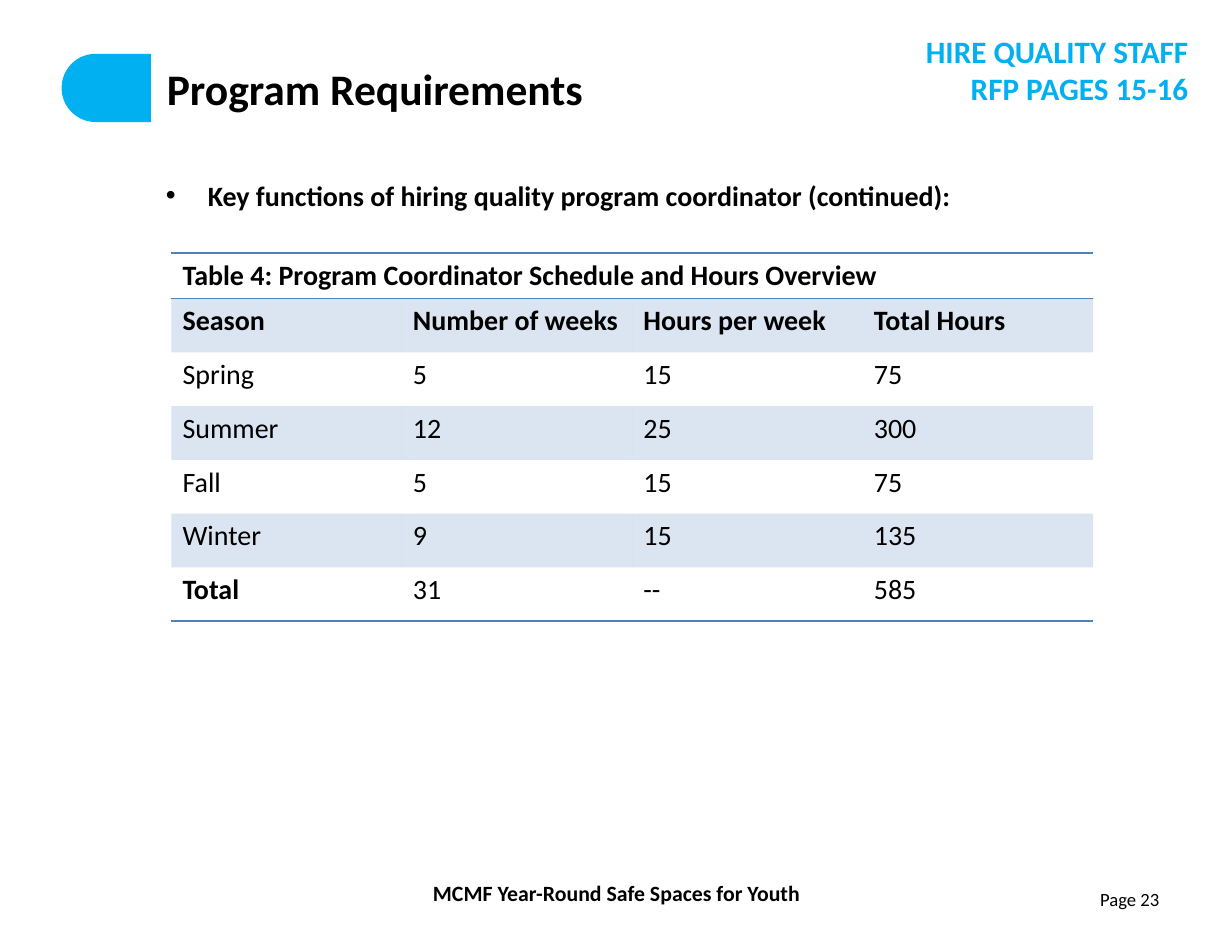
from dataclasses import dataclass
from typing import Optional

from lxml import etree
from pptx import Presentation
from pptx.dml.color import RGBColor
from pptx.enum.shapes import MSO_SHAPE
from pptx.enum.text import MSO_ANCHOR, PP_ALIGN
from pptx.oxml.ns import qn
from pptx.util import Inches, Pt

ROUNDED, RECTANGLE = MSO_SHAPE.ROUNDED_RECTANGLE, MSO_SHAPE.RECTANGLE
LEFT, CENTER, RIGHT = PP_ALIGN.LEFT, PP_ALIGN.CENTER, PP_ALIGN.RIGHT
TOP, MIDDLE = MSO_ANCHOR.TOP, MSO_ANCHOR.MIDDLE

FONT = "Calibri"
COLORS = {"black": "000000", "white": "FFFFFF", "accent": "00B0F0", "table": "4F81BD"}
NO_STYLE = "{2D5ABB26-0587-4C30-8999-92F81FD0307C}"
TABLE_TITLE = "Table 4: Program Coordinator Schedule and Hours Overview"
SCHEDULE = [
    ("Season", "Number of weeks", "Hours per week", "Total Hours"),
    ("Spring", "5", "15", "75"),
    ("Summer", "12", "25", "300"),
    ("Fall", "5", "15", "75"),
    ("Winter", "9", "15", "135"),
    ("Total", "31", "--", "585"),
]


@dataclass(frozen=True)
class Area:
    left: float
    top: float
    width: float
    height: float

    def lengths(self) -> tuple:
        return tuple(Inches(n) for n in (self.left, self.top, self.width, self.height))


@dataclass(frozen=True)
class Band:
    kind: int
    area: Area
    fill: str
    line: Optional[str] = None


@dataclass(frozen=True)
class Label:
    text: str
    area: Area
    size: float
    align: int
    color: str = "black"
    bold: bool = True


BANDS = [
    Band(ROUNDED, Area(0.55, 0.48, 8.44, 0.61), "accent"),
    Band(RECTANGLE, Area(1.36, 0.41, 7.67, 0.86), "white", "white"),
]
LABELS = [
    Label("MCMF Year-Round Safe Spaces for Youth", Area(2.66, 7.81, 5.69, 0.34), 14, CENTER),
    Label("Page 23", Area(7.88, 7.88, 2.57, 0.45), 12, RIGHT, bold=False),
    Label("HIRE QUALITY STAFF\nRFP PAGES 15-16", Area(6.13, 0.24, 4.58, 0.77), 20, RIGHT, "accent"),
]


def rgb(name: str) -> RGBColor:
    return RGBColor.from_string(COLORS[name])


def write(frame, text: str, *, size: float, align=LEFT, color="black", bold=False) -> None:
    frame.text = text
    frame.word_wrap = True
    for para in frame.paragraphs:
        para.alignment = align
        para.space_before = Pt(0)
        for span in para.runs:
            span.font.name = FONT
            span.font.size = Pt(size)
            span.font.bold = bold
            span.font.color.rgb = rgb(color)


def place(box, area: Area, anchor) -> None:
    box.left, box.top, box.width, box.height = area.lengths()
    frame = box.text_frame
    frame.vertical_anchor = anchor
    frame.margin_left = frame.margin_right = Inches(0.11)
    frame.margin_top = frame.margin_bottom = Inches(0.06)


def add_bullet(para, symbol: str, color: str, indent: float) -> None:
    properties = para._p.get_or_add_pPr()
    properties.set("marL", str(Inches(indent)))
    properties.set("indent", str(-Inches(indent)))
    shade = etree.SubElement(properties, qn("a:buClr"))
    etree.SubElement(shade, qn("a:srgbClr"), val=COLORS[color])
    etree.SubElement(properties, qn("a:buFont"), typeface="Arial")
    etree.SubElement(properties, qn("a:buChar"), char=symbol)


def draw_band(page, band: Band) -> None:
    shape = page.shapes.add_shape(band.kind, *band.area.lengths())
    shape.shadow.inherit = False
    if band.kind == ROUNDED:
        shape.adjustments[0] = 0.5
    shape.fill.solid()
    shape.fill.fore_color.rgb = rgb(band.fill)
    if band.line:
        shape.line.color.rgb = rgb(band.line)
        shape.line.width = Pt(2)
    else:
        shape.line.fill.background()
    page.shapes.title.element.addprevious(shape.element)


def draw_label(page, label: Label) -> None:
    box = page.shapes.add_textbox(*label.area.lengths())
    write(box.text_frame, label.text, size=label.size, align=label.align,
          color=label.color, bold=label.bold)


def fill_cell(cell, shaded: bool) -> None:
    if not shaded:
        cell.fill.background()
        return
    cell.fill.solid()
    cell.fill.fore_color.rgb = rgb("table")
    shade = cell._tc.tcPr.find(".//" + qn("a:srgbClr"))
    etree.SubElement(shade, qn("a:alpha"), val="20000")


def add_borders(cell, sides: tuple) -> None:
    properties = cell._tc.get_or_add_tcPr()
    for position, side in enumerate(sides):
        line = etree.Element(qn(f"a:ln{side}"), w=str(Pt(1)))
        solid = etree.SubElement(line, qn("a:solidFill"))
        etree.SubElement(solid, qn("a:srgbClr"), val=COLORS["table"])
        properties.insert(position, line)


def draw_schedule(page, area: Area) -> None:
    rows = [(TABLE_TITLE, "", "", "")] + SCHEDULE
    last = len(rows) - 1
    borders = {0: ("T", "B"), last: ("B",)}
    table = page.shapes.add_table(len(rows), len(rows[0]), *area.lengths()).table
    table.first_row = table.horz_banding = False
    table._tbl.tblPr.find(qn("a:tableStyleId")).text = NO_STYLE
    for r, values in enumerate(rows):
        table.rows[r].height = Inches(0.48 if r else 0.4)
        for c, value in enumerate(values):
            cell = table.cell(r, c)
            bold = r < 2 or (r == last and c == 0)
            write(cell.text_frame, value, size=18, bold=bold)
            fill_cell(cell, shaded=r % 2 == 1)
            add_borders(cell, borders.get(r, ()))
    table.cell(0, 0).merge(table.cell(0, len(rows[0]) - 1))


def main() -> None:
    deck = Presentation()
    deck.slide_width, deck.slide_height = Inches(11), Inches(8.5)
    page = deck.slides.add_slide(deck.slide_layouts[1])

    for band in BANDS:
        draw_band(page, band)

    title, body = page.shapes.title, page.placeholders[1]
    place(title, Area(1.38, 0.51, 9.07, 0.55), MIDDLE)
    write(title.text_frame, "Program Requirements", size=28, bold=True)

    place(body, Area(1.37, 1.53, 8.47, 0.61), TOP)
    add_bullet(body.text_frame.paragraphs[0], "➢", "accent", 0.25)
    write(body.text_frame, "Key functions of hiring quality program coordinator (continued):",
          size=18, bold=True)

    draw_schedule(page, Area(1.53, 2.26, 8.23, 3.28))
    for label in LABELS:
        draw_label(page, label)
    deck.save("out.pptx")


if __name__ == "__main__":
    main()
